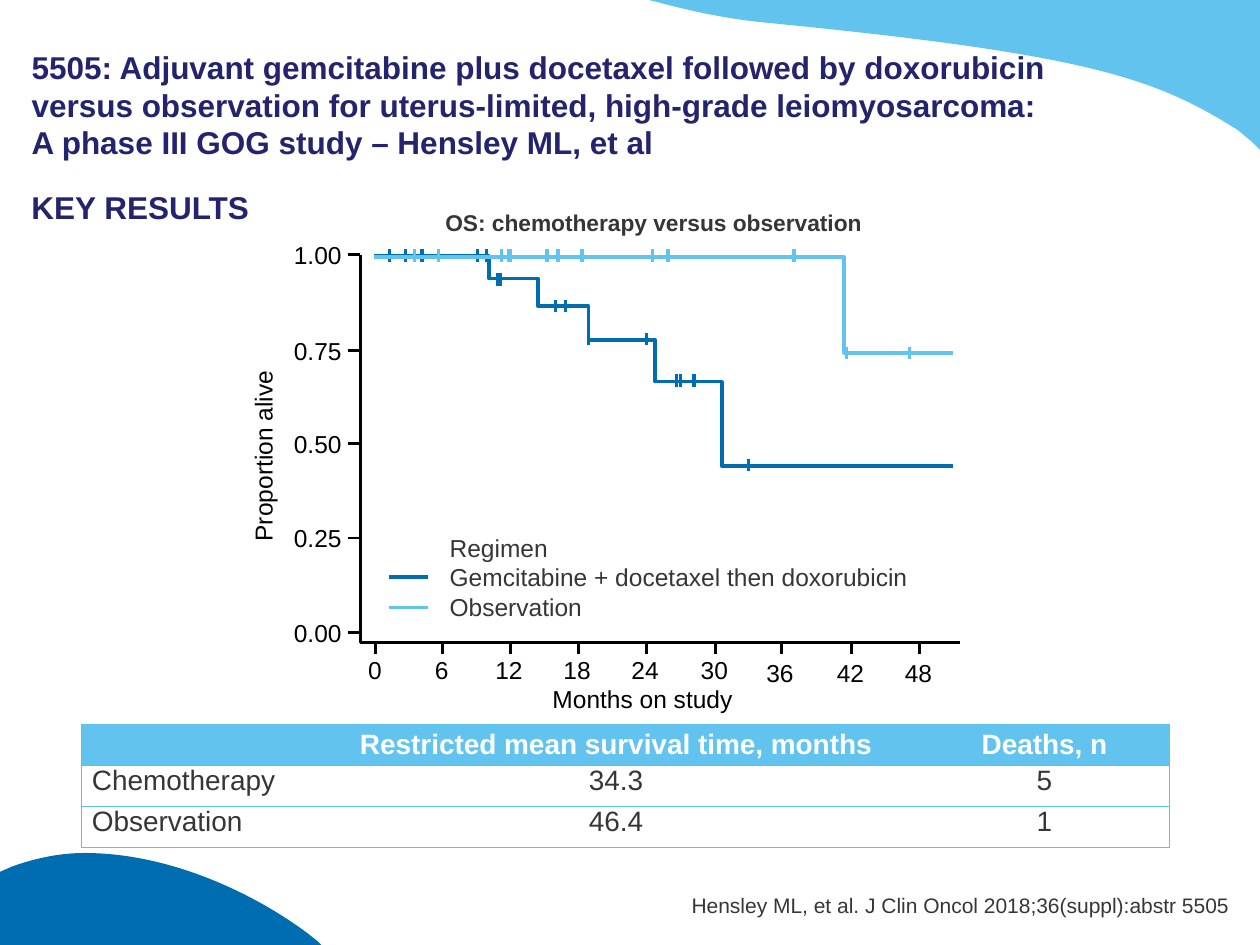
from dataclasses import dataclass

from lxml import etree
from pptx import Presentation
from pptx import util as u
from pptx.dml.color import RGBColor
from pptx.enum import shapes, text
from pptx.oxml.ns import qn
from pptx.shapes.group import GroupShape
from pptx.slide import Slide

PX = u.Inches(1) // 100  # 100 px to the inch
FONT = "Arial"
NAVY = RGBColor(0x23, 0x24, 0x6D)
BLUE = RGBColor(0x00, 0x6D, 0xB0)
SKY = RGBColor(0x62, 0xC4, 0xEE)
BORDER = RGBColor(0x5C, 0xC1, 0xEC)
GREY = RGBColor(0x36, 0x36, 0x36)
BLACK = RGBColor(0, 0, 0)
WHITE = RGBColor(0xFF, 0xFF, 0xFF)
LEFT, CENTER, RIGHT = text.PP_ALIGN.LEFT, text.PP_ALIGN.CENTER, text.PP_ALIGN.RIGHT
TOP, MIDDLE, BOTTOM = text.MSO_ANCHOR.TOP, text.MSO_ANCHOR.MIDDLE, text.MSO_ANCHOR.BOTTOM

Point = tuple[int, int]
Canvas = Slide | GroupShape


@dataclass
class Label:
    words: str
    x: int
    y: int
    width: int
    height: int
    size: int = 14
    color: RGBColor = BLACK
    bold: bool = False
    align: text.PP_ALIGN = CENTER
    anchor: text.MSO_ANCHOR = TOP
    insets: tuple[int, int, int, int] = (10, 5, 10, 5)
    wrap: bool = False
    rotation: int = 0


@dataclass
class Survival:
    name: str
    color: RGBColor
    legend_y: int
    steps: list[Point]
    censored: dict[int, list[int]]  # top of the marks: their x positions


@dataclass
class Wave:
    color: RGBColor
    start: Point
    segments: list[list[Point]]  # one point: straight; three points: Bézier curve


def style_paragraph(para, size: int, color: RGBColor, bold: bool, align) -> None:
    para.alignment = align
    for span in para.runs:
        span.font.name, span.font.size = FONT, u.Pt(size)
        span.font.bold, span.font.color.rgb = bold, color


def draw_label(canvas: Canvas, label: Label) -> None:
    box = canvas.shapes.add_textbox(
        *(n * PX for n in (label.x, label.y, label.width, label.height)))
    box.rotation = label.rotation
    frame = box.text_frame
    frame.text = label.words
    frame.word_wrap, frame.vertical_anchor = label.wrap, label.anchor
    (frame.margin_left, frame.margin_top,
     frame.margin_right, frame.margin_bottom) = (n * PX for n in label.insets)
    for para in frame.paragraphs:
        style_paragraph(para, label.size, label.color, label.bold, label.align)


def draw_line(canvas: Canvas, start: Point, end: Point, color: RGBColor, width: float) -> None:
    line = canvas.shapes.add_connector(
        shapes.MSO_CONNECTOR.STRAIGHT, *(n * PX for n in start + end))
    line.line.color.rgb, line.line.width = color, u.Pt(width)
    etree.SubElement(line._element.spPr, qn("a:effectLst"))


def draw_outline(canvas: Canvas, points: list[Point], close: bool = False):
    builder = canvas.shapes.build_freeform(*points[0], scale=PX)
    builder.add_line_segments(points[1:], close=close)
    shape = builder.convert_to_shape()
    shape.shadow.inherit = False
    return shape


def draw_polyline(canvas: Canvas, points: list[Point], color: RGBColor, width: float) -> None:
    shape = draw_outline(canvas, points)
    shape.fill.background()
    shape.line.color.rgb, shape.line.width = color, u.Pt(width)


def draw_wave(canvas: Canvas, wave: Wave) -> None:
    points = [wave.start] + [point for segment in wave.segments for point in segment]
    shape = draw_outline(canvas, points, close=True)
    shape.fill.solid()
    shape.fill.fore_color.rgb = wave.color
    shape.line.fill.background()
    # Join each run of three straight segments into one curve
    straight = iter(list(shape._element.iter(qn("a:lnTo"))))
    for segment in wave.segments:
        parts = [next(straight) for _ in segment]
        if len(parts) == 3:
            curve = etree.Element(qn("a:cubicBezTo"))
            parts[0].addprevious(curve)
            for part in parts:
                curve.append(part[0])
                part.getparent().remove(part)


def draw_survival(canvas: Canvas, arm: Survival) -> None:
    for y, positions in arm.censored.items():
        for x in positions:
            draw_line(canvas, (x, y), (x, y + 10), arm.color, 2)
    draw_polyline(canvas, arm.steps, arm.color, 2)


def set_border(cell, side: str, visible: bool) -> None:
    line = etree.SubElement(cell._tc.get_or_add_tcPr(), qn(f"a:ln{side}"), w=str(u.Pt(0.75)))
    if visible:
        fill = etree.SubElement(line, qn("a:solidFill"))
        etree.SubElement(fill, qn("a:srgbClr"), val=str(BORDER))
    else:
        etree.SubElement(line, qn("a:noFill"))


def draw_table(page: Slide, rows: list[list[str]], widths: list[int]) -> None:
    table = page.shapes.add_table(
        len(rows), len(widths), 65 * PX, 575 * PX, sum(widths) * PX, 98 * PX).table
    table.first_row = table.horz_banding = False
    for column, width in zip(table.columns, widths):
        column.width = width * PX
    for r, row in enumerate(rows):
        header = r == 0
        for c, words in enumerate(row):
            cell = table.cell(r, c)
            sides = {"L": c == 0, "R": c == len(widths) - 1, "T": True, "B": True}
            for side, visible in sides.items():
                set_border(cell, side, visible)
            cell.fill.solid()
            cell.fill.fore_color.rgb = SKY if header else WHITE
            cell.margin_left = cell.margin_right = 8 * PX
            cell.margin_top = cell.margin_bottom = 0
            cell.vertical_anchor = MIDDLE if header else TOP
            if words:
                cell.text_frame.text = words
                style_paragraph(cell.text_frame.paragraphs[0], 16, WHITE if header else GREY,
                                header, CENTER if c else LEFT)


WAVES = [
    Wave(SKY, (515, 0), [[(1000, 0)], [(1000, 119)], [(993, 112)],
                         [(989, 109), (986, 106), (982, 103)],
                         [(917, 62), (864, 43), (608, 18)],
                         [(577, 15), (549, 9), (523, 2)]]),
    Wave(BLUE, (67, 677), [[(145, 677), (218, 719), (252, 747)], [(255, 750)], [(0, 750)],
                           [(0, 692)], [(9, 688)], [(28, 681), (48, 677), (67, 677)]]),
]
ARMS = [
    Survival("Gemcitabine + docetaxel then doxorubicin", BLUE, 458,
             [(756, 370), (573, 370), (573, 303), (520, 303), (520, 270), (467, 270),
              (467, 243), (427, 243), (427, 221), (388, 221), (388, 203), (297, 203)],
             {198: [309, 322, 335, 379, 386], 217: [395, 397], 238: [441, 449],
              264: [467, 513], 297: [537, 540, 551], 364: [594]}),
    Survival("Observation", SKY, 482,
             [(756, 280), (670, 280), (670, 204), (297, 204)],
             {198: [329, 348, 398, 404, 405, 434, 443, 462, 518, 530, 630],
              275: [672, 722]}),
]
HEADINGS = [
    Label("5505: Adjuvant gemcitabine plus docetaxel followed by doxorubicin versus "
          "observation for uterus-limited, high-grade leiomyosarcoma: \v"
          "A phase III GOG study – Hensley ML, et al", 25, 25, 852, 103, 18, NAVY, True,
          LEFT, BOTTOM, (0, 5, 0, 0), True),
    Label("KEY RESULTS", 25, 144, 950, 581, 18, NAVY, True, LEFT, insets=(0, 5, 0, 5), wrap=True),
    Label("Hensley ML, et al. J Clin Oncol 2018;36(suppl):abstr 5505", 546, 708, 430, 20,
          12, GREY, align=RIGHT, anchor=BOTTOM, insets=(0, 0, 0, 0)),
    Label("OS: chemotherapy versus observation", 313, 161, 411, 32, 13, GREY, True, wrap=True),
]
PLOT_TEXT = [
    Label("Proportion alive", 131, 345, 156, 34, rotation=270),
    Label("Months on study", 428, 538, 164, 34),
    Label("\n".join(["Regimen"] + [arm.name for arm in ARMS]), 347, 418, 400, 81,
          color=GREY, align=LEFT, wrap=True),
]
Y_TICKS = {"1.00": 202, "0.75": 278, "0.50": 352, "0.25": 427, "0.00": 502}
X_TICKS = [298, 351, 405, 459, 513, 568, 620, 676, 730]  # every 6 months


def draw_plot(plot: GroupShape) -> None:
    # Axes with ticks and their labels
    draw_polyline(plot, [(286, 202), (286, 510), (762, 510)], BLACK, 1.5)
    for words, y in Y_TICKS.items():
        draw_line(plot, (276, y), (286, y), BLACK, 1.5)
        draw_label(plot, Label(words, 223, y - 17, 58, 34, align=RIGHT, anchor=MIDDLE))
    for i, x in enumerate(X_TICKS):
        draw_line(plot, (x, 511), (x, 519), BLACK, 1.5)
        width = 31 if i < 2 else 42
        draw_label(plot, Label(str(6 * i), x - 1 - width // 2, 515 if i < 6 else 517, width, 34))

    # Axis titles, legend and survival curves
    for label in PLOT_TEXT:
        draw_label(plot, label)
    for arm in ARMS:
        draw_line(plot, (309, arm.legend_y), (340, arm.legend_y), arm.color, 2)
    for arm in ARMS:
        draw_survival(plot, arm)


def main() -> None:
    deck = Presentation()
    deck.slide_width, deck.slide_height = 1000 * PX, 750 * PX
    page = deck.slides.add_slide(deck.slide_layouts[6])
    for wave in WAVES:
        draw_wave(page, wave)
    for label in HEADINGS:
        draw_label(page, label)
    draw_table(page, [["", "Restricted mean survival time, months", "Deaths, n"],
                      ["Chemotherapy", "34.3", "5"],
                      ["Observation", "46.4", "1"]], [183, 482, 198])
    draw_plot(page.shapes.add_group_shape())
    deck.save("out.pptx")


if __name__ == "__main__":
    main()
